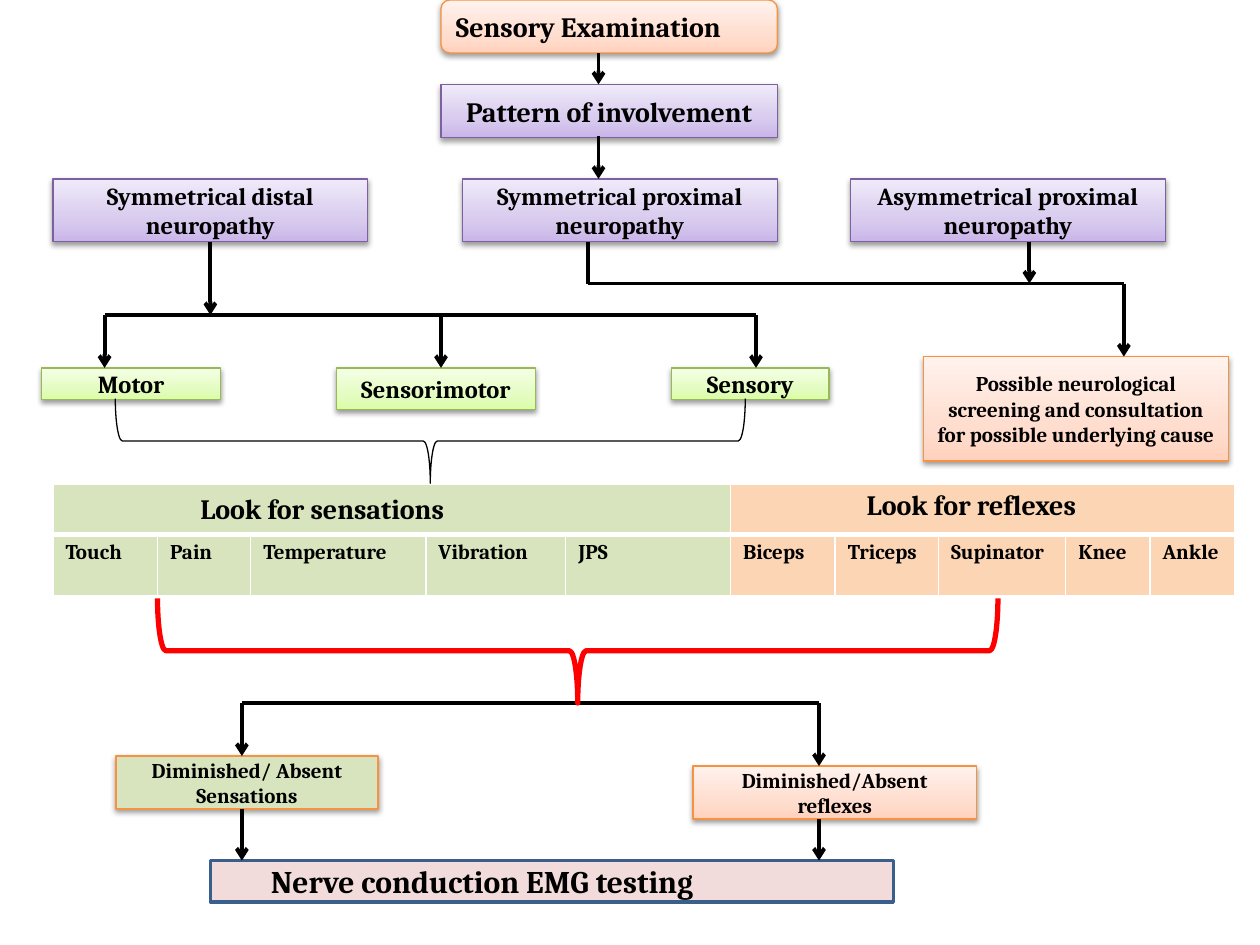
from copy import deepcopy

from lxml import etree
from pptx import Presentation
from pptx.dml.color import RGBColor
from pptx.enum.shapes import MSO_CONNECTOR, MSO_SHAPE
from pptx.enum.text import MSO_ANCHOR, PP_ALIGN
from pptx.oxml.ns import qn
from pptx.util import Inches, Pt

RECT = MSO_SHAPE.RECTANGLE
ROUNDED = MSO_SHAPE.ROUNDED_RECTANGLE
BRACE = MSO_SHAPE.RIGHT_BRACE
STRAIGHT = MSO_CONNECTOR.STRAIGHT
MIDDLE = MSO_ANCHOR.MIDDLE
LEFT, CENTER = PP_ALIGN.LEFT, PP_ALIGN.CENTER

BLACK = RGBColor(0x00, 0x00, 0x00)
WHITE = RGBColor(0xFF, 0xFF, 0xFF)
RED = RGBColor(0xFF, 0x00, 0x00)
PURPLE_LINE = RGBColor(0x7D, 0x60, 0xA0)
LIME_LINE = RGBColor(0x98, 0xB9, 0x55)
ORANGE_LINE = RGBColor(0xF6, 0x92, 0x40)
BLUE_LINE = RGBColor(0x3A, 0x5F, 0x8C)
GREEN = RGBColor(0xD7, 0xE4, 0xBD)
PEACH = RGBColor(0xFC, 0xD5, 0xB5)
PINK = RGBColor(0xF2, 0xDC, 0xDB)

# Gradients run from bottom to top
PURPLE_FADE = (RGBColor(0xC9, 0xB5, 0xE8), RGBColor(0xD8, 0xCB, 0xEE), RGBColor(0xF0, 0xEA, 0xF9))
LIME_FADE = (RGBColor(0xDA, 0xFD, 0xA7), RGBColor(0xE4, 0xFC, 0xC2), RGBColor(0xF5, 0xFF, 0xE7))
ORANGE_FADE = (RGBColor(0xFF, 0xD2, 0xBD), RGBColor(0xFF, 0xDE, 0xD0), RGBColor(0xFF, 0xF2, 0xED))
STOP_POSITIONS = (0, 0.35, 1)

PURPLE = (PURPLE_FADE, PURPLE_LINE)
LIME = (LIME_FADE, LIME_LINE)
ORANGE = (ORANGE_FADE, ORANGE_LINE)

FONT = "Cambria"
MARGIN = 0.1

COLUMN_WIDTHS = (0.83, 0.74, 1.39, 1.11, 0.83, 0.83, 0.82, 1.01, 0.67, 0.67)
ROW_HEIGHTS = (0.4, 0.49)
# heading, left margin, top margin, fill, tests
TABLE_GROUPS = (
    ("Look for sensations", 1.17, 0.08, GREEN,
     ("Touch", "Pain", "Temperature", "Vibration", "JPS")),
    ("Look for reflexes", 1.08, 0.05, PEACH,
     ("Biceps", "Triceps", "Supinator", "Knee", "Ankle")),
)


def write(tf, text, size, align=LEFT):
    p = tf.paragraphs[0]
    p.alignment = align
    r = p.add_run()
    r.text = text
    r.font.name = FONT
    r.font.size = Pt(size)
    r.font.bold = True
    r.font.color.rgb = BLACK


def fill_gradient(fill, sp, colors):
    fill.gradient()
    fill.gradient_angle = 90
    stop_list = sp._element.spPr.find(qn("a:gradFill")).find(qn("a:gsLst"))
    stop_list.append(deepcopy(stop_list[0]))
    for stop, position, color in zip(fill.gradient_stops, STOP_POSITIONS, colors):
        stop.position = position
        stop.color.rgb = color


def add_soft_shadow(sp):
    effects = sp._element.spPr.find(qn("a:effectLst"))
    shadow = etree.SubElement(effects, qn("a:outerShdw"), blurRad=str(Pt(3.1)),
                              dist=str(Pt(1.6)), dir="5400000", rotWithShape="0")
    color = etree.SubElement(shadow, qn("a:srgbClr"), val=str(BLACK))
    etree.SubElement(color, qn("a:alpha"), val="38000")


def add_box(s, text, at, style, size, align=CENTER, kind=RECT,
            line_width=0.75, shadow=True, margin_left=MARGIN):
    fill, line = style
    sp = s.shapes.add_shape(kind, *map(Inches, at))
    sp.shadow.inherit = False
    if shadow:
        add_soft_shadow(sp)
    if isinstance(fill, RGBColor):
        sp.fill.solid()
        sp.fill.fore_color.rgb = fill
    else:
        fill_gradient(sp.fill, sp, fill)
    sp.line.color.rgb = line
    sp.line.width = Pt(line_width)
    tf = sp.text_frame
    tf.word_wrap = True
    tf.vertical_anchor = MIDDLE
    tf.margin_left = Inches(margin_left)
    write(tf, text, size, align)
    return sp


def add_line(s, x1, y1, x2, y2, arrow=False):
    line = s.shapes.add_connector(STRAIGHT, *map(Inches, (x1, y1, x2, y2)))
    line.line.color.rgb = BLACK
    line.line.width = Pt(2.25)
    if arrow:
        etree.SubElement(line.line._get_or_add_ln(), qn("a:tailEnd"), type="arrow")
    etree.SubElement(line._element.spPr, qn("a:effectLst"))
    return line


def add_down_arrow(s, x, top, bottom):
    return add_line(s, x, top, x, bottom, arrow=True)


def add_brace(s, at, color, width, adjustments=()):
    """Add a right brace turned to point down; at is its frame before turning."""
    sp = s.shapes.add_shape(BRACE, *map(Inches, at))
    sp.shadow.inherit = False
    sp.rotation = 90
    sp.fill.background()
    sp.line.color.rgb = color
    sp.line.width = Pt(width)
    for i, value in enumerate(adjustments):
        sp.adjustments[i] = value


def style_cell(cell, fill, top, bottom):
    tcPr = cell._tc.get_or_add_tcPr()
    for side, width in (("L", 1), ("R", 1), ("T", top), ("B", bottom)):
        ln = etree.SubElement(tcPr, qn("a:ln" + side), w=str(Pt(width)))
        solid = etree.SubElement(ln, qn("a:solidFill"))
        etree.SubElement(solid, qn("a:srgbClr"), val=str(WHITE))
    cell.fill.solid()
    cell.fill.fore_color.rgb = fill


def add_test_table(s):
    frame = s.shapes.add_table(len(ROW_HEIGHTS), len(COLUMN_WIDTHS), Inches(0.42), Inches(3.84),
                               Inches(sum(COLUMN_WIDTHS)), Inches(sum(ROW_HEIGHTS)))
    table = frame.table
    table.first_row = table.horz_banding = False
    for column, width in zip(table.columns, COLUMN_WIDTHS):
        column.width = Inches(width)
    for row, height in zip(table.rows, ROW_HEIGHTS):
        row.height = Inches(height)

    first = 0
    for heading, margin_left, margin_top, fill, tests in TABLE_GROUPS:
        for col, test in enumerate(tests, first):
            style_cell(table.cell(0, col), fill, 1, 3)
            style_cell(table.cell(1, col), fill, 3, 1)
            write(table.cell(1, col).text_frame, test, 12)
        head = table.cell(0, first)
        head.merge(table.cell(0, first + len(tests) - 1))
        head.margin_left = Inches(margin_left)
        head.margin_top = Inches(margin_top)
        write(head.text_frame, heading, 16)
        first += len(tests)


def main():
    prs = Presentation()
    prs.slide_width, prs.slide_height = Inches(10), Inches(7.5)
    s = prs.slides.add_slide(prs.slide_layouts[6])

    add_box(s, "Sensory Examination", (3.5, 0, 2.67, 0.42), ORANGE, 16, LEFT, ROUNDED)
    add_box(s, "Pattern of involvement", (3.5, 0.67, 2.67, 0.42), PURPLE, 16)
    distal, _, _ = [
        add_box(s, f"{pattern} neuropathy", (x, 1.42, 2.5, 0.5), PURPLE, 14)
        for pattern, x in (("Symmetrical distal", 0.42), ("Symmetrical proximal", 3.67),
                           ("Asymmetrical proximal", 6.75))
    ]
    for text, x, width, height in (("Motor", 0.33, 1.42, 0.25), ("Sensorimotor", 2.67, 1.58, 0.33),
                                   ("Sensory", 5.33, 1.25, 0.25)):
        add_box(s, text, (x, 2.92, width, height), LIME, 14)
    add_box(s, "Possible neurological screening and consultation for possible underlying cause",
            (7.33, 2.83, 2.42, 0.83), ORANGE, 12)
    add_test_table(s)
    add_brace(s, (3.08, 1, 0.67, 5), BLACK, 0.75)

    add_box(s, "Diminished/Absent reflexes", (5.5, 6.08, 2.25, 0.42), ORANGE, 12)
    add_box(s, "Diminished/ Absent Sensations", (0.92, 6, 2.08, 0.42), (GREEN, ORANGE_LINE), 12)
    add_box(s, "Nerve conduction EMG testing", (1.67, 6.83, 5.42, 0.33), (PINK, BLUE_LINE), 18,
            LEFT, line_width=2, shadow=False, margin_left=0.48)

    for x1, y1, x2, y2 in ((0.83, 2.5, 6, 2.5), (4.67, 2.25, 8.92, 2.25),
                           (4.67, 1.92, 4.67, 2.25), (1.92, 5.58, 6.5, 5.58)):
        add_line(s, x1, y1, x2, y2)
    add_down_arrow(s, 1.67, 1.92, 2.5).begin_connect(distal, 2)
    for x, top, bottom in ((4.75, 0.42, 0.67), (4.75, 1.08, 1.42),
                           (0.83, 2.5, 2.92), (3.5, 2.5, 2.92), (6, 2.5, 2.92),
                           (8.17, 1.92, 2.25), (8.92, 2.25, 2.83),
                           (1.92, 5.58, 6), (6.5, 5.58, 6.08),
                           (1.92, 6.42, 6.83), (6.5, 6.5, 6.83)):
        add_down_arrow(s, x, top, bottom)
    add_brace(s, (4.17, 1.83, 0.83, 6.67), RED, 3, (0.08, 0.5))

    prs.save("out.pptx")


if __name__ == "__main__":
    main()
